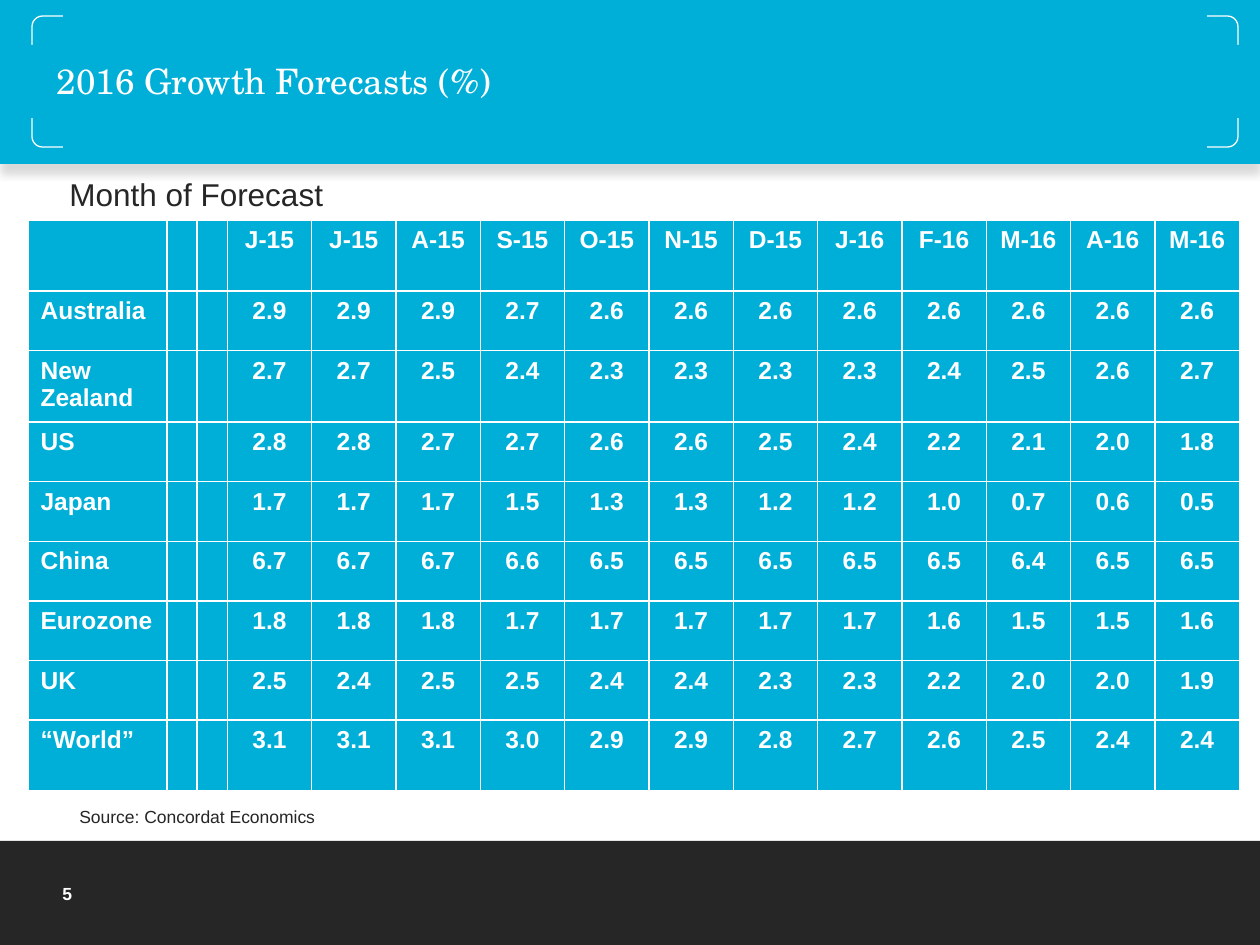
from lxml import etree
from pptx import Presentation, util as u
from pptx.dml.color import RGBColor
from pptx.enum import shapes, text
from pptx.oxml import ns

PX = u.Inches(1) // 126

BLUE = RGBColor(0x00, 0xAF, 0xD7)
DARK = RGBColor(0x26, 0x26, 0x26)
WHITE = RGBColor(0xFF, 0xFF, 0xFF)

SANS = "Arial"
SERIF = "TeX Gyre Schola"

MONTHS = "J-15 J-15 A-15 S-15 O-15 N-15 D-15 J-16 F-16 M-16 A-16 M-16".split()
FORECASTS = {
    "Australia": "2.9 2.9 2.9 2.7 2.6 2.6 2.6 2.6 2.6 2.6 2.6 2.6",
    "New Zealand": "2.7 2.7 2.5 2.4 2.3 2.3 2.3 2.3 2.4 2.5 2.6 2.7",
    "US": "2.8 2.8 2.7 2.7 2.6 2.6 2.5 2.4 2.2 2.1 2.0 1.8",
    "Japan": "1.7 1.7 1.7 1.5 1.3 1.3 1.2 1.2 1.0 0.7 0.6 0.5",
    "China": "6.7 6.7 6.7 6.6 6.5 6.5 6.5 6.5 6.5 6.4 6.5 6.5",
    "Eurozone": "1.8 1.8 1.8 1.7 1.7 1.7 1.7 1.7 1.6 1.5 1.5 1.6",
    "UK": "2.5 2.4 2.5 2.5 2.4 2.4 2.3 2.3 2.2 2.0 2.0 1.9",
    "“World”": "3.1 3.1 3.1 3.0 2.9 2.9 2.8 2.7 2.6 2.5 2.4 2.4",
}


def emu(*lengths):
    return [round(length * PX) for length in lengths]


def add_panel(parent, box, fill, kind=shapes.MSO_SHAPE.RECTANGLE):
    panel = parent.add_shape(kind, *emu(*box))
    panel.shadow.inherit = False
    panel.fill.solid()
    panel.fill.fore_color.rgb = fill
    panel.line.fill.background()
    return panel


def add_run(paragraph, words, size, color, bold=False, font=SANS):
    run = paragraph.add_run()
    run.text = words
    run.font.size = u.Pt(size)
    run.font.name = font
    run.font.bold = bold
    run.font.color.rgb = color


def add_label(slide, box, words, size, color, bold=False,
              anchor=text.MSO_ANCHOR.TOP):
    label = slide.shapes.add_textbox(*emu(*box))
    frame = label.text_frame
    frame.word_wrap = True
    frame.vertical_anchor = anchor
    add_run(frame.paragraphs[0], words, size, color, bold)


def cast_shadow(panel):
    effects = panel.element.spPr.find(ns.qn("a:effectLst"))
    shadow = etree.SubElement(
        effects, ns.qn("a:outerShdw"), blurRad=str(u.Pt(5)),
        dist=str(u.Pt(5)), dir="5400000", algn="t", rotWithShape="0")
    color = etree.SubElement(shadow, ns.qn("a:srgbClr"), val="000000")
    etree.SubElement(color, ns.qn("a:alpha"), val="15000")


def build_header(slide, box):
    left, top, width, height = box
    cast_shadow(add_panel(slide.shapes, box, BLUE))

    brackets = slide.shapes.add_group_shape().shapes
    frame = add_panel(brackets, (left + 32, top + 16, width - 54, height - 33),
                      BLUE, shapes.MSO_SHAPE.ROUNDED_RECTANGLE)
    frame.adjustments[0] = 0.08
    frame.line.color.rgb = WHITE
    frame.line.width = u.Pt(0.75)
    add_panel(brackets, (left + 19, top + 45, width - 31, height - 91), BLUE)
    add_panel(brackets, (left + 63, top + 8, width - 116, height - 15), BLUE)

    title = slide.shapes.title
    slide.shapes.element.append(title.element)
    title.left, title.top, title.width, title.height = emu(
        left + 44, top + 50, width - 130, 62)
    heading = title.text_frame
    heading.word_wrap = True
    heading.auto_size = text.MSO_AUTO_SIZE.NONE
    heading.vertical_anchor = text.MSO_ANCHOR.MIDDLE
    heading.paragraphs[0].alignment = text.PP_ALIGN.LEFT
    add_run(heading.paragraphs[0], "2016 Growth Forecasts (%)", 20, WHITE,
            font=SERIF)


def build_forecast_table(slide, box):
    left, top, width, height = box
    label_width, spacer_width, tall_row = 139, 30, 71
    rows = [["", "", "", *MONTHS]]
    rows += [[country, "", "", *values.split()]
             for country, values in FORECASTS.items()]

    table = slide.shapes.add_table(
        len(rows), len(rows[0]), *emu(left, top, width, height)).table
    month_width = (width - label_width - 2 * spacer_width) / len(MONTHS)
    widths = [label_width, spacer_width, spacer_width]
    widths += [month_width] * len(MONTHS)
    for column, column_width in zip(table.columns, emu(*widths)):
        column.width = column_width

    tall_rows = {0, 2, len(rows) - 1}
    normal_row = ((height - tall_row * len(tall_rows))
                  / (len(rows) - len(tall_rows)))
    for r, values in enumerate(rows):
        table.rows[r].height, = emu(tall_row if r in tall_rows else normal_row)
        for c, value in enumerate(values):
            cell = table.cell(r, c)
            cell.fill.solid()
            cell.fill.fore_color.rgb = BLUE
            if value:
                paragraph = cell.text_frame.paragraphs[0]
                if c:
                    paragraph.alignment = text.PP_ALIGN.CENTER
                add_run(paragraph, value, 14, WHITE, bold=True)


def build_footer(slide, box):
    left, top, width, height = box
    add_panel(slide.shapes, box, DARK)
    add_label(slide, (left + 50, top + 35, 146, 34), "5", 10, WHITE, bold=True,
              anchor=text.MSO_ANCHOR.MIDDLE)


def main():
    deck = Presentation()
    deck.slide_width, deck.slide_height = emu(1260, 945)
    slide = deck.slides.add_slide(deck.slide_layouts[5])
    build_footer(slide, (0, 841, 1260, 104))
    build_header(slide, (0, 0, 1260, 164))
    add_label(slide, (57, 169, 945, 63), "Month of Forecast", 18, DARK)
    build_forecast_table(slide, (28, 220, 1211, 571))
    add_label(slide, (67, 800, 364, 34), "Source: Concordat Economics", 10,
              DARK)
    deck.save("out.pptx")


if __name__ == "__main__":
    main()
